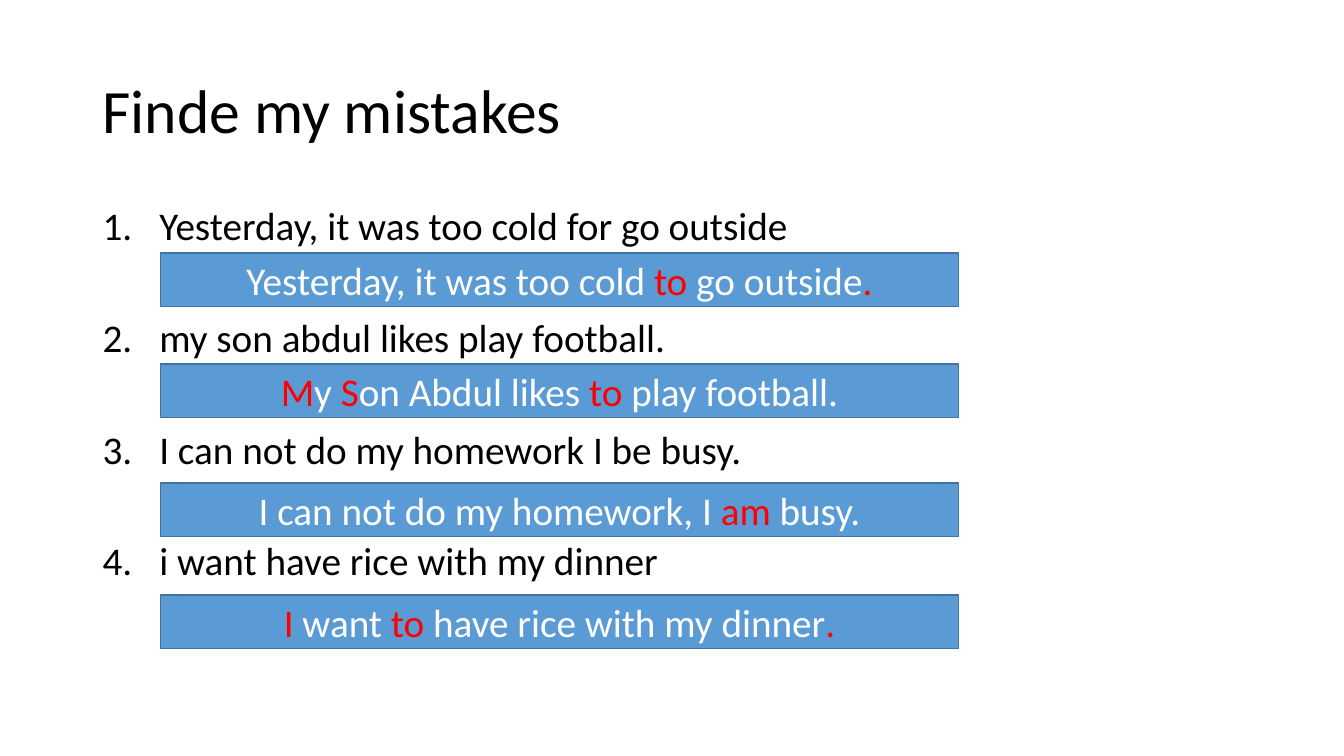
from lxml.etree import SubElement
from pptx import Presentation
from pptx.dml.color import RGBColor
from pptx.enum.shapes import MSO_SHAPE
from pptx.enum.text import MSO_ANCHOR, MSO_AUTO_SIZE, PP_ALIGN
from pptx.oxml.ns import qn
from pptx.util import Cm, Pt

COLORS = {
    "text": "000000",
    "bar": "5B9BD5",
    "edge": "43739E",
    "answer": "FFFFFF",
    "fix": "FF0000",
}

# Bar top in cm, faulty sentence, answer with its fixes between bars
TASKS = [
    (6.38, "Yesterday, it was too cold for go outside",
     "Yesterday, it was too cold |to| go outside|.|"),
    (9.17, "my son abdul likes play football.",
     "|M|y |S|on Abdul likes |to| play football."),
    (12.17, "I can not do my homework I be busy.",
     "I can not do my homework, I |am| busy."),
    (14.99, "i want have rice with my dinner",
     "|I| want |to| have rice with my dinner|.|"),
]


def color(name):
    return RGBColor.from_string(COLORS[name])


def style(para, size, name, align):
    para.alignment = align
    para.font.name = "Calibri"
    para.font.size = Pt(size)
    para.font.color.rgb = color(name)


def place(holder, top, height, anchor):
    holder.left, holder.top = Cm(2.33), Cm(top)
    holder.width, holder.height = Cm(29.21), Cm(height)
    frame = holder.text_frame
    frame.auto_size = MSO_AUTO_SIZE.NONE
    frame.vertical_anchor = anchor
    return frame


def add_title(slide, text):
    frame = place(slide.shapes.title, 1.02, 3.68, MSO_ANCHOR.MIDDLE)
    frame.text = text
    para = frame.paragraphs[0]
    para.line_spacing = 0.9
    style(para, 44, "text", PP_ALIGN.LEFT)


def number(para):
    """Turn the bullet of a paragraph into a running number."""
    props = para._p.get_or_add_pPr()
    props.set("marL", str(Cm(1.43)))
    props.set("indent", str(-Cm(1.43)))
    SubElement(props, qn("a:buFont"), typeface="+mj-lt")
    SubElement(props, qn("a:buAutoNum"), type="arabicPeriod")


def add_list(slide, lines):
    frame = place(slide.placeholders[1], 5.08, 12.09, MSO_ANCHOR.TOP)
    frame.text = "\n".join(lines)
    for para in frame.paragraphs:
        para.line_spacing = 0.9
        para.space_before = Pt(0)
        para.space_after = Pt(49.6)
        number(para)
        style(para, 28, "text", PP_ALIGN.LEFT)


def add_bar(slide, top, answer):
    bar = slide.shapes.add_shape(
        MSO_SHAPE.RECTANGLE, Cm(4.04), Cm(top), Cm(20.12), Cm(1.35))
    bar.shadow.inherit = False
    bar.fill.solid()
    bar.fill.fore_color.rgb = color("bar")
    bar.line.color.rgb = color("edge")
    bar.line.width = Pt(1)
    frame = bar.text_frame
    frame.word_wrap = True
    frame.vertical_anchor = MSO_ANCHOR.MIDDLE
    para = frame.paragraphs[0]
    style(para, 28, "answer", PP_ALIGN.CENTER)
    for index, part in enumerate(answer.split("|")):
        if part:
            run = para.add_run()
            run.text = part
            run.font.color.rgb = color("fix" if index % 2 else "answer")


def main():
    deck = Presentation()
    deck.slide_width, deck.slide_height = Cm(33.87), Cm(19.05)
    slide = deck.slides.add_slide(deck.slide_layouts[1])
    add_title(slide, "Finde my mistakes")
    add_list(slide, [line for _, line, _ in TASKS])
    for top, _, answer in TASKS:
        add_bar(slide, top, answer)
    deck.save("out.pptx")


if __name__ == "__main__":
    main()
